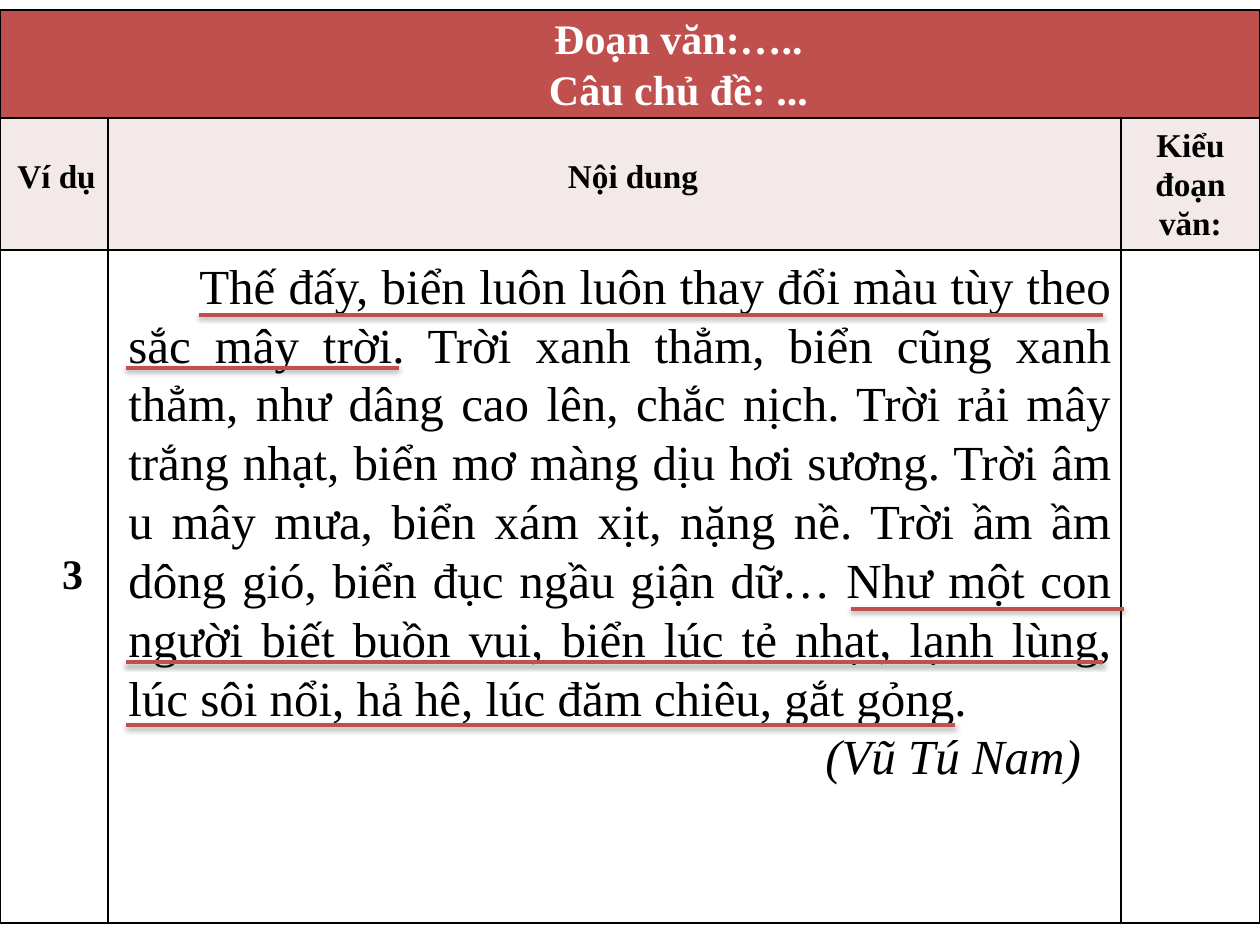
"""Build a one-slide Vietnamese paragraph-analysis table with underlined topic sentences."""
from lxml import etree
from pptx import Presentation, util as u
from pptx.dml.color import RGBColor
from pptx.enum import shapes, text
from pptx.oxml import parse_xml
from pptx.oxml.ns import nsdecls

RED = RGBColor(0xC0, 0x50, 0x4D)
PINK = RGBColor(0xF4, 0xE9, 0xE9)
WHITE = RGBColor(255, 255, 255)
BLACK = RGBColor(0, 0, 0)
MID = text.PP_ALIGN.CENTER
FONT = "Times New Roman"

PASSAGE = (
    "Thế đấy, biển luôn luôn thay đổi màu tùy theo sắc mây trời. "
    "Trời xanh thẳm, biển cũng xanh thẳm, như dâng cao lên, chắc nịch. "
    "Trời rải mây trắng nhạt, biển mơ màng dịu hơi sương. "
    "Trời âm u mây mưa, biển xám xịt, nặng nề. "
    "Trời ầm ầm dông gió, biển đục ngầu giận dữ… "
    "Như một con người biết buồn vui, biển lúc tẻ nhạt, lạnh lùng, "
    "lúc sôi nổi, hả hê, lúc đăm chiêu, gắt gỏng."
)


def px(n):
    return u.Emu(round(n * 914400 / 126))


def write(para, words, size=19, color=BLACK, bold=False, italic=False,
          align=MID, left=0, first=0, space=None, before=0):
    para.alignment = align
    para.space_before = u.Pt(before)
    if space:
        para.line_spacing = space
    props = para._p.get_or_add_pPr()
    props.set("marL", str(px(left)))
    props.set("indent", str(px(first)))
    run = para.add_run()
    run.text = words
    font = run.font
    font.name, font.size, font.bold, font.italic = FONT, u.Pt(size), bold, italic
    font.color.rgb = color


class Page:
    def __init__(self, slide):
        self.slide = slide

    def grid(self, x, y, cols, rows):
        frame = self.slide.shapes.add_table(
            len(rows), len(cols), px(x), px(y), px(sum(cols)), px(sum(rows)))
        table = frame.table
        for col, size in zip(table.columns, cols):
            col.width = px(size)
        for row, size in zip(table.rows, rows):
            row.height = px(size)
        return table

    def cell(self, cell, fill, lines=(), **form):
        cell.margin_left = cell.margin_right = px(4)
        cell.margin_top = cell.margin_bottom = 0
        cell.vertical_anchor = text.MSO_ANCHOR.MIDDLE
        props = cell._tc.get_or_add_tcPr()
        for side in "LRTB":
            props.append(parse_xml(
                f'<a:ln{side} {nsdecls("a")} w="12700"><a:solidFill>'
                f'<a:srgbClr val="{BLACK}"/></a:solidFill></a:ln{side}>'))
        cell.fill.solid()
        cell.fill.fore_color.rgb = fill
        frame = cell.text_frame
        for i, line in enumerate(lines):
            para = frame.add_paragraph() if i else frame.paragraphs[0]
            write(para, line, bold=True, **form)

    def box(self, x, y, w, h):
        frame = self.slide.shapes.add_textbox(px(x), px(y), px(w), px(h)).text_frame
        frame.word_wrap = True
        return frame

    def rule(self, x, end, y):
        line = self.slide.shapes.add_connector(
            shapes.MSO_CONNECTOR.STRAIGHT, px(x), px(y), px(end), px(y))
        line.line.color.rgb = RED
        line.line.width = u.Pt(2)
        props = line._element.spPr
        fx = etree.SubElement(props, props.nsmap["a"].join("{}") + "effectLst")
        fx.append(parse_xml(
            f'<a:outerShdw {nsdecls("a")} blurRad="39370" dist="20320" dir="5400000" '
            f'rotWithShape="0"><a:srgbClr val="{BLACK}"><a:alpha val="38000"/>'
            '</a:srgbClr></a:outerShdw>'))


def main():
    deck = Presentation()
    deck.slide_width, deck.slide_height = px(1260), px(945)
    page = Page(deck.slides.add_slide(deck.slide_layouts[6]))

    table = page.grid(0, 10, (108, 1013, 139), (108, 132, 673))
    table.cell(0, 0).merge(table.cell(0, 2))
    tight = u.Pt(13.8)
    page.cell(table.cell(0, 0), RED, ("Đoạn văn:…..", "Câu chủ đề: ..."),
              size=24, color=WHITE, left=97, space=1.07, before=0.4)
    page.cell(table.cell(1, 0), PINK, ("Ví dụ",), first=5, space=tight)
    page.cell(table.cell(1, 1), PINK, ("Nội dung",), left=37, space=tight)
    page.cell(table.cell(1, 2), PINK, ("Kiểu đoạn văn:",), space=1.07)
    page.cell(table.cell(2, 0), WHITE, ("3",), size=24, left=37, space=tight)
    for col in (1, 2):
        page.cell(table.cell(2, col), WHITE)

    frame = page.box(116, 249, 1008, 606)
    write(frame.paragraphs[0], PASSAGE, size=28,
          align=text.PP_ALIGN.JUSTIFY, first=71)
    write(frame.add_paragraph(), "(Vũ Tú Nam)", size=28, italic=True,
          align=text.PP_ALIGN.LEFT, left=697)

    for x, end, y in ((199, 1103, 315), (126, 399, 368), (851, 1124, 609),
                      (126, 1103, 662), (126, 955, 725)):
        page.rule(x, end, y)
    deck.save("out.pptx")


if __name__ == "__main__":
    main()
